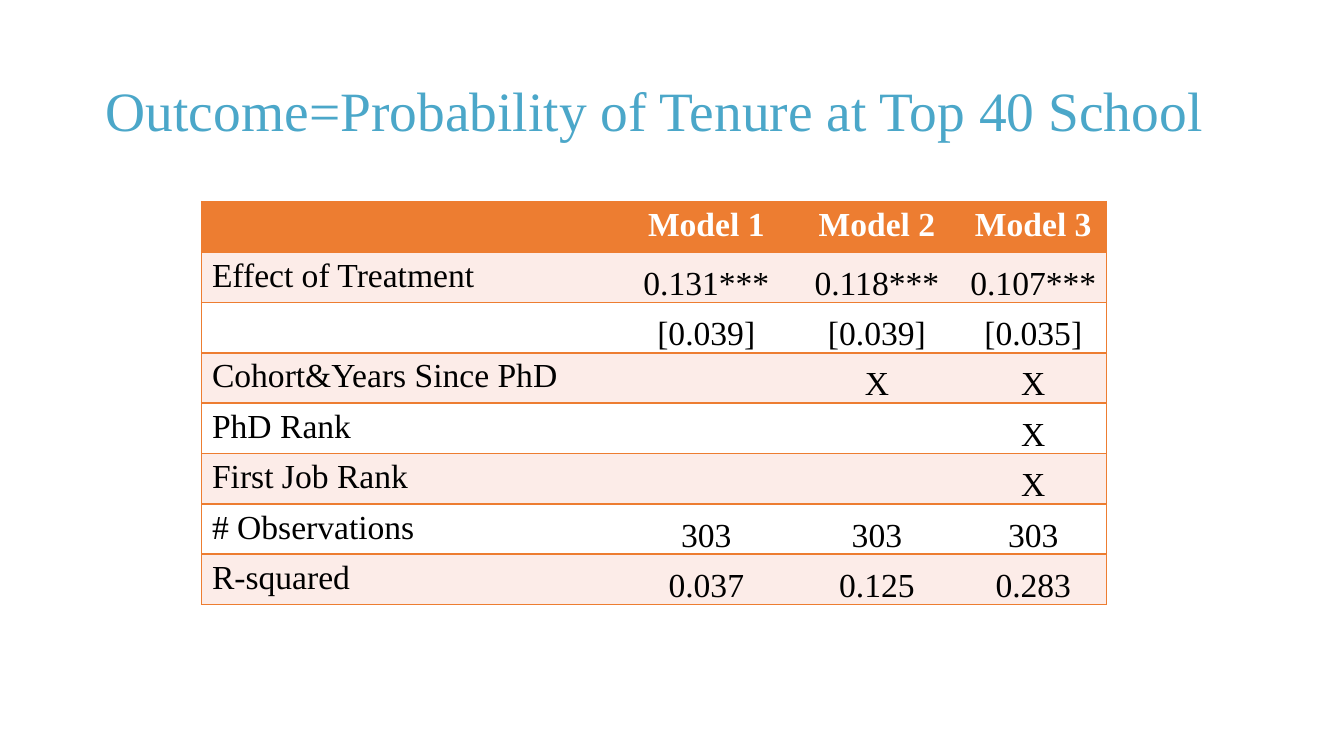
from lxml.etree import SubElement
from pptx import Presentation
from pptx.dml.color import RGBColor
from pptx.enum.text import MSO_ANCHOR as Anchor, MSO_AUTO_SIZE as AutoSize, PP_ALIGN as Align
from pptx.oxml.ns import qn
from pptx.util import Pt

TITLE = "Outcome=Probability of Tenure at Top 40 School"
ROWS = [
    ("", "Model 1", "Model 2", "Model 3"),
    ("Effect of Treatment", "0.131***", "0.118***", "0.107***"),
    ("", "[0.039]", "[0.039]", "[0.035]"),
    ("Cohort&Years Since PhD", "", "X", "X"),
    ("PhD Rank", "", "", "X"),
    ("First Job Rank", "", "", "X"),
    ("# Observations", "303", "303", "303"),
    ("R-squared", "0.037", "0.125", "0.283"),
]
COLUMN_WIDTHS = (223.6, 93.6, 89.2, 78.4)
ROW_HEIGHT = 27
FONT = "Times New Roman"
BLUE, ORANGE, PINK = "4BA7C9", "ED7D31", "FCECE8"
WHITE, BLACK = "FFFFFF", "000000"


def rgb(value):
    return RGBColor.from_string(value)


def style(paragraph, size, color, align, bold=False):
    paragraph.alignment = align
    font = paragraph.font
    font.name, font.size, font.bold = FONT, Pt(size), bold
    font.color.rgb = rgb(color)


def set_margins(cell, side, top, bottom):
    cell.margin_left = cell.margin_right = Pt(side)
    cell.margin_top, cell.margin_bottom = Pt(top), Pt(bottom)


def set_borders(cell, visible):
    """Draw the visible sides (letters of LRTB) and clear the others."""
    properties = cell._tc.get_or_add_tcPr()
    for side in "LRTB":
        line = SubElement(properties, qn(f"a:ln{side}"), w=str(Pt(1)))
        if side in visible:
            fill = SubElement(line, qn("a:solidFill"))
            SubElement(fill, qn("a:srgbClr"), val=ORANGE)
        else:
            SubElement(line, qn("a:noFill"))


def format_cell(cell, text, row, column):
    header, label = row == 0, column == 0
    last = column == len(COLUMN_WIDTHS) - 1
    set_borders(cell, "TB" + "L" * label + "R" * last)
    cell.fill.solid()
    cell.fill.fore_color.rgb = rgb(ORANGE if header else PINK if row % 2 else WHITE)
    cell.text = text
    style(cell.text_frame.paragraphs[0], 18, WHITE if header else BLACK,
          Align.LEFT if label else Align.CENTER, header)
    if text and (header or label):
        set_margins(cell, 5.6, 2.8, 2.8)
    else:
        set_margins(cell, 0.7, 0.7, 0)
        cell.vertical_anchor = Anchor.BOTTOM


presentation = Presentation()
presentation.slide_width, presentation.slide_height = Pt(720), Pt(405)
slide = presentation.slides.add_slide(presentation.slide_layouts[5])

title = slide.shapes.title
title.left, title.top, title.width, title.height = Pt(49.5), Pt(21.6), Pt(621), Pt(78.3)
title.text = TITLE
title.text_frame.auto_size = AutoSize.NONE
title.text_frame.vertical_anchor = Anchor.MIDDLE
heading = title.text_frame.paragraphs[0]
style(heading, 29.7, BLUE, Align.LEFT)
heading.line_spacing = 0.9

table = slide.shapes.add_table(
    len(ROWS), len(COLUMN_WIDTHS), Pt(108), Pt(108),
    Pt(sum(COLUMN_WIDTHS)), Pt(ROW_HEIGHT * len(ROWS))).table
for column, width in zip(table.columns, COLUMN_WIDTHS):
    column.width = Pt(width)
for row_index, texts in enumerate(ROWS):
    table.rows[row_index].height = Pt(ROW_HEIGHT)
    for column_index, text in enumerate(texts):
        format_cell(table.cell(row_index, column_index), text, row_index, column_index)

presentation.save("out.pptx")
